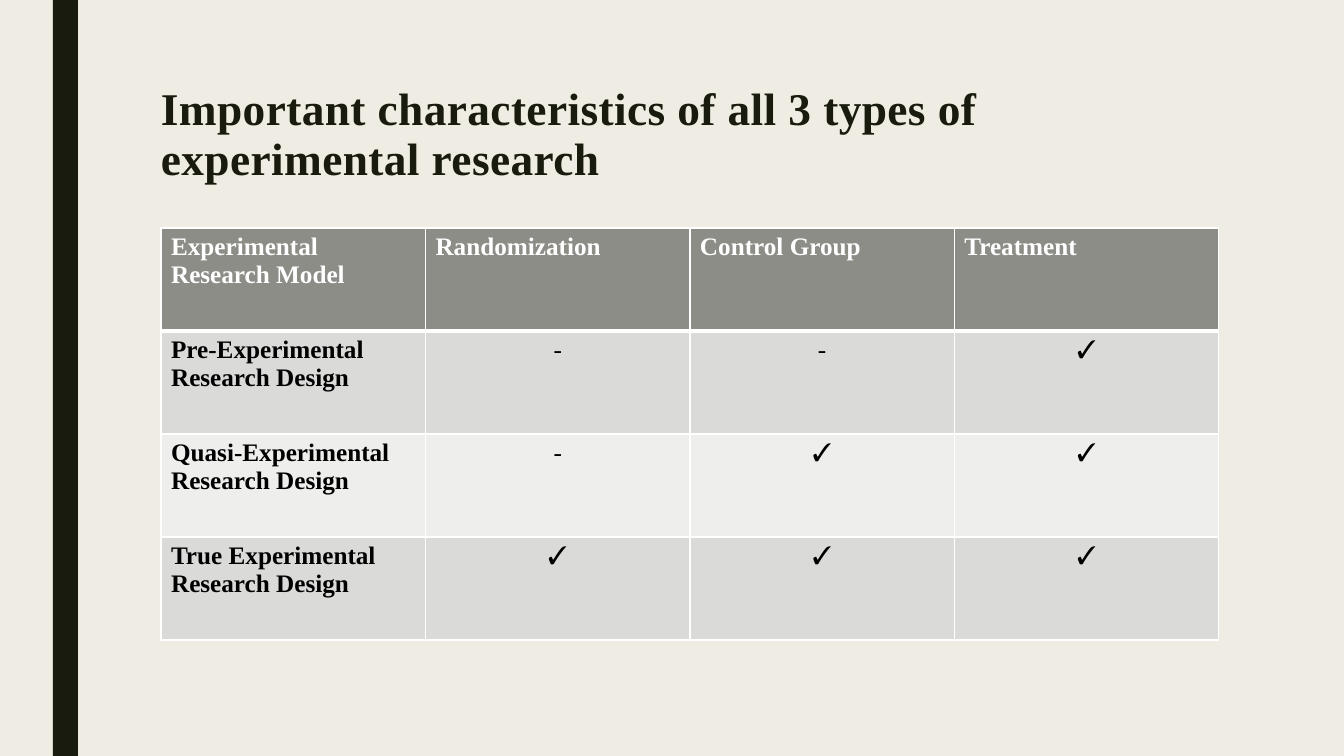
from dataclasses import dataclass

from lxml.etree import SubElement
from pptx import Presentation
from pptx.dml.color import RGBColor
from pptx.enum.shapes import MSO_SHAPE
from pptx.enum.text import MSO_ANCHOR, PP_ALIGN
from pptx.oxml import parse_xml
from pptx.oxml.ns import nsdecls, qn
from pptx.util import Emu, Pt

EMU_PER_PX = 914400 / 100.8
FONT = "Times New Roman"
COLORS = {
    "background": "EFEDE3",
    "dark": "191B0E",
    "header": "8C8D86",
    "band": "DADBD9",
    "light": "EEEEED",
    "white": "FFFFFF",
    "black": "000000",
}
HEADINGS = ["Experimental Research Model", "Randomization", "Control Group", "Treatment"]


@dataclass
class Design:
    name: str
    marks: str
    fill: str


DESIGNS = [
    Design("Pre-Experimental Research Design", "--✓", "band"),
    Design("Quasi-Experimental Research Design", "-✓✓", "light"),
    Design("True Experimental Research Design", "✓✓✓", "band"),
]


def px(value: int) -> Emu:
    return Emu(round(value * EMU_PER_PX))


def color(name: str) -> RGBColor:
    return RGBColor.from_string(COLORS[name])


def style_run(r, size: float, color_name: str, bold: bool) -> None:
    r.font.name = FONT
    r.font.size = Pt(size)
    r.font.bold = bold
    r.font.color.rgb = color(color_name)


def add_side_bar(s) -> None:
    sp = s.shapes.add_shape(MSO_SHAPE.RECTANGLE, px(53), 0, px(25), px(756))
    sp.shadow.inherit = False
    sp.fill.solid()
    sp.fill.fore_color.rgb = color("dark")
    sp.line.fill.background()


def add_title(s, text: str) -> None:
    tf = s.shapes.add_textbox(px(151), px(76), px(1058), px(163)).text_frame
    tf.word_wrap = True
    tf.vertical_anchor = MSO_ANCHOR.TOP
    tf.margin_top = px(9)
    p = tf.paragraphs[0]
    p.text = text
    p.line_spacing = 0.92
    r = p.runs[0]
    style_run(r, 32.4, "dark", True)
    r.font._element.set("spc", "30")


def set_borders(cell, top: int, bottom: int) -> None:
    tc_pr = cell._tc.get_or_add_tcPr()
    for i, (side, width) in enumerate({"L": 1, "R": 1, "T": top, "B": bottom}.items()):
        ln = parse_xml(f'<a:ln{side} {nsdecls("a")} w="{Pt(width)}"/>')
        fill = SubElement(ln, qn("a:solidFill"))
        SubElement(fill, qn("a:srgbClr")).set("val", COLORS["white"])
        tc_pr.insert(i, ln)


def fill_cell(cell, text: str, fill: str, row: int, col: int) -> None:
    is_header = row == 0
    cell.fill.solid()
    cell.fill.fore_color.rgb = color(fill)
    p = cell.text_frame.paragraphs[0]
    p.text = text
    p.alignment = PP_ALIGN.LEFT if is_header or col == 0 else PP_ALIGN.CENTER
    style_run(p.runs[0], 18, "white" if is_header else "black", is_header or col == 0)
    set_borders(cell, top=3 if row == 1 else 1, bottom=3 if is_header else 1)


def add_design_table(s) -> None:
    rows = [(HEADINGS, "header")] + [([d.name, *d.marks], d.fill) for d in DESIGNS]
    width, row_height = px(1058), px(103)
    table = s.shapes.add_table(
        len(rows), len(HEADINGS), px(161), px(228), width, row_height * len(rows)
    ).table
    table.horz_banding = False
    for column in table.columns:
        column.width = Emu(width // len(HEADINGS))
    for i, (texts, fill) in enumerate(rows):
        table.rows[i].height = row_height
        for j, text in enumerate(texts):
            fill_cell(table.cell(i, j), text, fill, i, j)


def main() -> None:
    prs = Presentation()
    prs.slide_width, prs.slide_height = px(1344), px(756)
    s = prs.slides.add_slide(prs.slide_layouts[6])
    s.background.fill.solid()
    s.background.fill.fore_color.rgb = color("background")
    add_side_bar(s)
    add_title(s, "Important characteristics of all 3 types of experimental research")
    add_design_table(s)
    prs.save("out.pptx")


if __name__ == "__main__":
    main()
